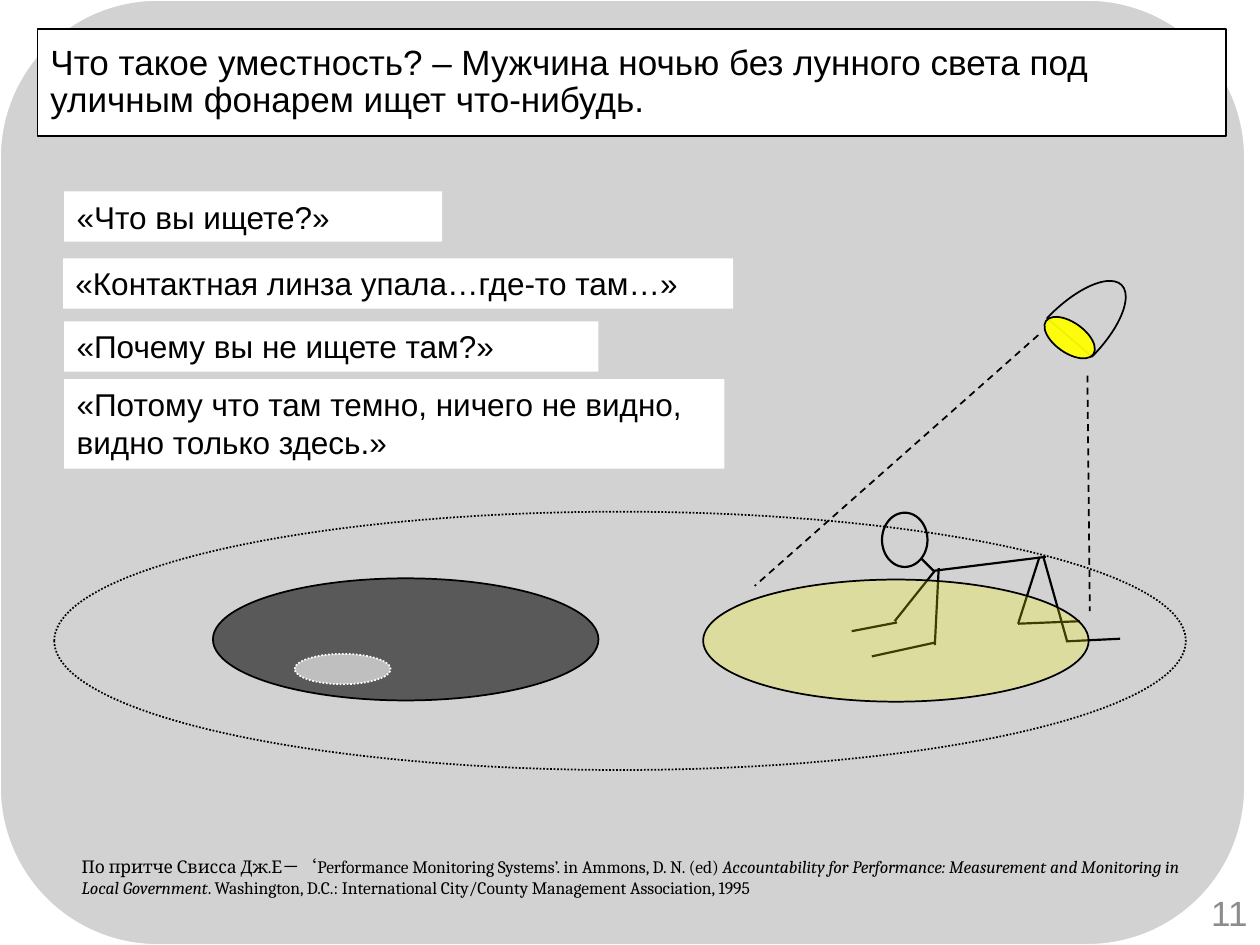
import pptx
import pptx.util
import pptx.dml.color
import pptx.enum.dml
import pptx.enum.shapes
import pptx.enum.text
import pptx.oxml.ns
import lxml.etree
from dataclasses import dataclass

Pt = pptx.util.Pt
SHAPE = pptx.enum.shapes.MSO_SHAPE
DASH = pptx.enum.dml.MSO_LINE
ALIGN = pptx.enum.text.PP_ALIGN
ANCHOR = pptx.enum.text.MSO_ANCHOR
FIT = pptx.enum.text.MSO_AUTO_SIZE
qn = pptx.oxml.ns.qn


@dataclass(frozen=True)
class Theme:
    black: str = "000000"
    white: str = "FFFFFF"
    gray: str = "BFBFBF"
    dark: str = "595959"
    light: str = "FFFF00"
    number: str = "8C8C8C"
    sans: str = "Arial"
    serif: str = "Cambria"
    title: int = 20
    speech: int = 18
    source: int = 10


T = Theme()

SPEECH = [  # left, top, width, height, text
    (36.7, 109.4, 216, 28.8, "«Что вы ищете?»"),
    (36, 147.6, 383, 28.8, "«Контактная линза упала…где-то там…»"),
    (36.7, 183.6, 305.3, 28.8, "«Почему вы не ищете там?»"),
    (36.7, 216.7, 377.3, 51.1,
     "«Потому что там темно, ничего не видно, видно только здесь.»"),
]

LIMBS = [  # x1, y1, x2, y2
    (526.3, 319, 533.5, 326.2),      # neck
    (533.5, 326.2, 597.6, 318.2),    # back
    (581.8, 356.4, 617, 355),        # far shin
    (609.1, 366.5, 640.1, 365),      # near shin
    (609.8, 366.5, 596.2, 318.2),    # near thigh
    (581.8, 356.4, 594, 318.2),      # far thigh
    (534.2, 368.6, 536.4, 324.7),    # near upper arm
    (498.2, 375.1, 534.2, 367.2),    # near forearm
    (511.2, 355, 534.2, 326.2),      # far upper arm
    (486.7, 360.7, 512.6, 355.7),    # far forearm
]

SOURCE = [  # text, italic
    ("По притче Свисса Дж.Е－‘Performance Monitoring Systems’. "
     "in Ammons, D. N. (ed) ", False),
    ("Accountability for Performance: Measurement and Monitoring "
     "in Local Government", True),
    (". Washington, D.C.: International City/County Management "
     "Association, 1995", False),
]


def rgb(color):
    return pptx.dml.color.RGBColor.from_string(color)


def paint(sp, fill=None, alpha=100, line=None, width=1, dash=None):
    """Set fill, transparency and outline."""
    if fill:
        sp.fill.solid()
        sp.fill.fore_color.rgb = rgb(fill)
        if alpha < 100:
            clr = sp.element.spPr.find(qn("a:solidFill"))[0]
            lxml.etree.SubElement(clr, qn("a:alpha"), val=str(alpha * 1000))
    else:
        sp.fill.background()
    if line:
        stroke(sp, line, width, dash)
    else:
        sp.line.fill.background()


def stroke(sp, color, width, dash=None):
    sp.line.color.rgb = rgb(color)
    sp.line.width = Pt(width)
    if dash:
        sp.line.dash_style = dash


def add_shape(shapes, kind, x, y, w, h, rotation=0, **style):
    sp = shapes.add_shape(kind, Pt(x), Pt(y), Pt(w), Pt(h))
    sp.shadow.inherit = False
    sp.rotation = rotation
    paint(sp, **style)
    return sp


def add_line(shapes, x1, y1, x2, y2, width=1, dash=None):
    cx = shapes.add_connector(pptx.enum.shapes.MSO_CONNECTOR.STRAIGHT,
                              Pt(x1), Pt(y1), Pt(x2), Pt(y2))
    stroke(cx, T.black, width, dash)
    lxml.etree.SubElement(cx.element.spPr, qn("a:effectLst"))


def write(sp, runs, size, font=T.sans, color=T.black, align=ALIGN.LEFT,
          anchor=ANCHOR.MIDDLE, fit=FIT.NONE):
    """Write one paragraph from (text, italic) runs."""
    tf = sp.text_frame
    tf.word_wrap = True
    tf.auto_size = fit
    tf.vertical_anchor = anchor
    p = tf.paragraphs[0]
    p.alignment = align
    for text, italic in runs:
        r = p.add_run()
        r.text = text
        r.font.size = Pt(size)
        r.font.name = font
        r.font.color.rgb = rgb(color)
        if italic:
            r.font.italic = True
    return p


def add_text(s, x, y, w, h, runs, size, **style):
    sp = s.shapes.add_textbox(Pt(x), Pt(y), Pt(w), Pt(h))
    write(sp, runs, size, **style)


def add_title(s, text):
    sp = s.shapes.title
    sp.left, sp.top, sp.width, sp.height = Pt(21.6), Pt(16.6), Pt(679), Pt(61.2)
    paint(sp, fill=T.white, line=T.black, width=0.75)
    write(sp, [(text, False)], T.title).line_spacing = 0.9
    sp.element.getparent().append(sp.element)  # bring in front of the panel


def add_man(s):
    add_shape(s.shapes, SHAPE.OVAL, 504, 293, 26, 31, line=T.black, width=1.25)
    for limb in LIMBS:
        add_line(s.shapes, *limb, width=1.25)


def add_lamp(s):
    # Pool of light and its beam
    beam = s.shapes.add_group_shape().shapes
    add_shape(beam, SHAPE.OVAL, 401.8, 331.2, 220.3, 69.8,
              fill=T.light, alpha=24, line=T.black)
    add_line(beam, 593.3, 191.5, 431.3, 334.8, dash=DASH.DASH)
    add_line(beam, 621.4, 214.6, 622.8, 349.2, dash=DASH.DASH)
    # Shade and bulb
    lamp = s.shapes.add_group_shape().shapes
    shade = add_shape(lamp, SHAPE.CHORD, 571, 175, 82, 33.8,
                      rotation=134.8, line=T.black)
    shade.adjustments[0] = 49.15
    shade.adjustments[1] = 162
    add_shape(lamp, SHAPE.OVAL, 594.7, 184.3, 33.1, 17.3, rotation=35.2,
              fill=T.light, alpha=94, line=T.black)


def main():
    prs = pptx.Presentation()
    prs.slide_width, prs.slide_height = Pt(720), Pt(540)
    s = prs.slides.add_slide(prs.slide_layouts[5])

    # Panel, title and slide number
    add_shape(s.shapes, SHAPE.ROUNDED_RECTANGLE, 0, 0, 711.4, 540,
              fill=T.gray, alpha=70, line=T.white)
    add_title(s, "Что такое уместность? – Мужчина ночью без лунного света "
                 "под уличным фонарем ищет что-нибудь.")
    add_text(s, 609.8, 502.6, 110.2, 37.4, [("11", False)], T.title,
             color=T.number, align=ALIGN.RIGHT)

    # Scene: ground, man, dark spot, lamp, lost lens
    add_shape(s.shapes, SHAPE.OVAL, 31, 292.4, 646.6, 147.6,
              line=T.black, dash=DASH.ROUND_DOT)
    add_man(s)
    add_shape(s.shapes, SHAPE.OVAL, 121.7, 330.5, 220.3, 69.8,
              fill=T.dark, line=T.black)
    add_lamp(s)
    add_shape(s.shapes, SHAPE.OVAL, 168.5, 373.7, 54.7, 17.3,
              fill=T.gray, line=T.white, dash=DASH.ROUND_DOT)

    # Source
    add_text(s, 39.6, 485.3, 661, 31.7, SOURCE, T.source, font=T.serif,
             fit=FIT.SHAPE_TO_FIT_TEXT)

    # Dialogue
    for x, y, w, h, text in SPEECH:
        sp = add_shape(s.shapes, SHAPE.RECTANGLE, x, y, w, h, fill=T.white)
        write(sp, [(text, False)], T.speech, anchor=ANCHOR.TOP,
              fit=FIT.SHAPE_TO_FIT_TEXT)

    prs.save("out.pptx")


if __name__ == "__main__":
    main()
